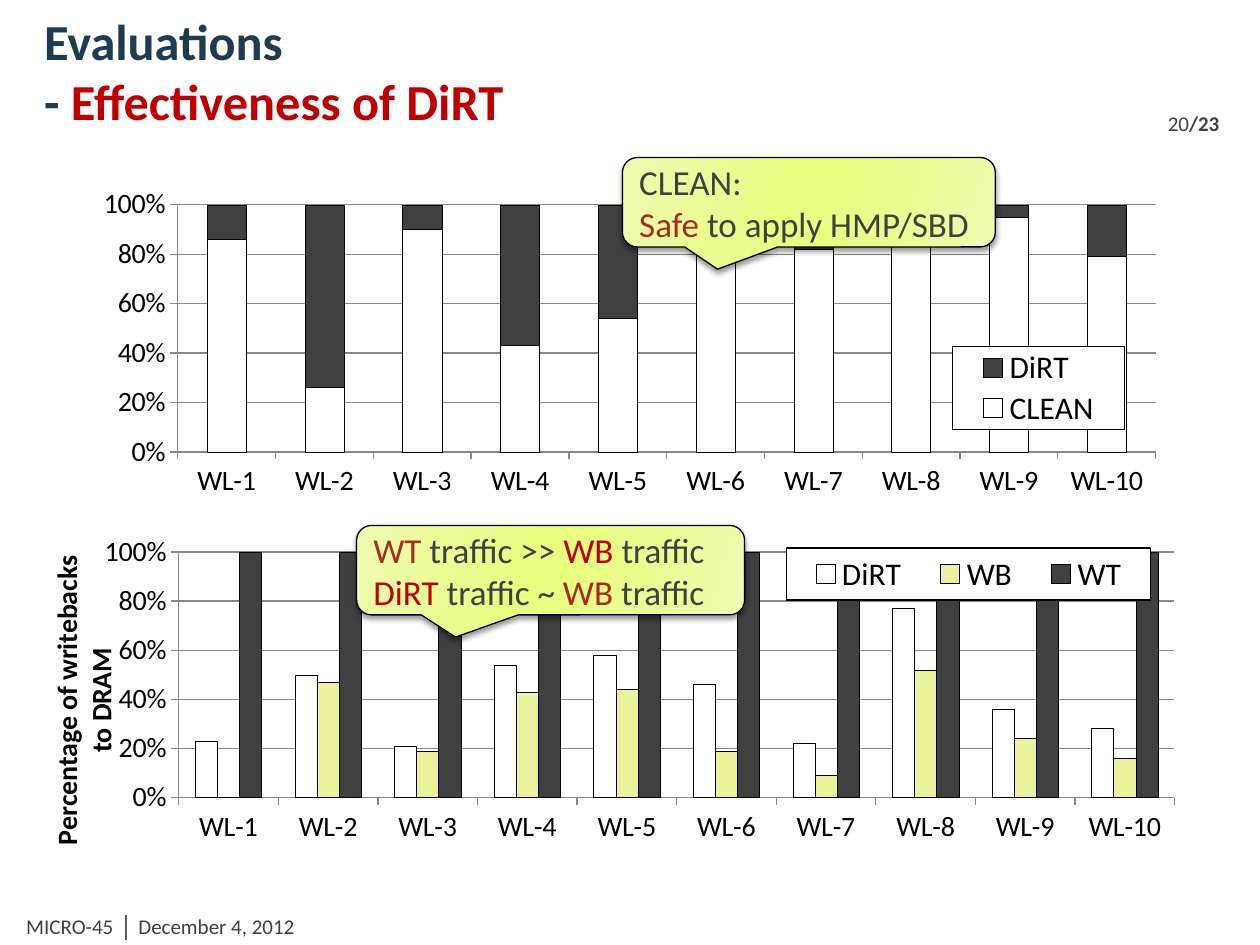
from lxml import etree
from pptx import Presentation
from pptx.chart.data import CategoryChartData
from pptx.dml.color import RGBColor
from pptx.enum.chart import XL_CHART_TYPE as ChartType, XL_LEGEND_POSITION as LegendPos, XL_TICK_MARK as Tick
from pptx.enum.shapes import MSO_CONNECTOR as Connector, MSO_SHAPE as Preset
from pptx.enum.text import MSO_ANCHOR as Anchor, PP_ALIGN as Align
from pptx.oxml import parse_xml
from pptx.oxml.ns import nsdecls, qn
from pptx.util import Inches, Pt

FONT = "Calibri"
HEX = {"navy": "203A4E", "red": "C00000", "brick": "AA2B1E", "dark": "404040", "rule": "595959",
       "grid": "888888", "lime": "EAF29B", "white": "FFFFFF", "black": "000000"}
COLOR = {name: RGBColor.from_string(value) for name, value in HEX.items()}
GLOW = [(0, "EFFBB3"), (30, "EAFC8F"), (45, "E9FD81"), (55, "E9FD81"), (73, "EAFC8F"), (100, "EFFBB3")]


def write_runs(paragraph, runs, size):
    """Add (text, colour name, bold) runs; a vertical tab in the text breaks the line."""
    paragraph.alignment = Align.LEFT
    for words, color, bold in runs:
        for index, part in enumerate(words.split("\v")):
            if index:
                paragraph.add_line_break()
            run = paragraph.add_run()
            run.text = part
            run.font.name, run.font.size, run.font.bold = FONT, Pt(size), bold
            run.font.color.rgb = COLOR[color]


def place(element, index, box, inner=False):
    """Give a chart part a manual layout, in shares of the chart's size."""
    for old in element.findall(qn("c:layout")):
        element.remove(old)
    layout = etree.Element(qn("c:layout"))
    manual = etree.SubElement(layout, qn("c:manualLayout"))
    settings = [("layoutTarget", "inner")] if inner else []
    settings += [("xMode", "edge"), ("yMode", "edge"), *zip("xywh", box)]
    for tag, value in settings:
        etree.SubElement(manual, qn(f"c:{tag}")).set("val", str(value))
    element.insert(index, layout)


prs = Presentation()
prs.slide_width, prs.slide_height = Inches(10), Inches(7.5)
slide = prs.slides.add_slide(prs.slide_layouts[5])
shapes = slide.shapes

# Title
title = shapes.title
title.left, title.top, title.width, title.height = map(Inches, (0.25, 0.17, 9.25, 0.92))
title.text_frame.vertical_anchor = Anchor.BOTTOM
write_runs(title.text_frame.paragraphs[0],
           [("Evaluations\v- ", "navy", True), ("Effectiveness of DiRT", "red", True)], 28.8)

# Footer and page number
for left, top, width, runs in [
    (0.11, 7.2, 0.92, [("MICRO-45", "dark", False)]),
    (1, 7.2, 3.18, [("December 4, 2012", "dark", False)]),
    (9.17, 0.83, 0.67, [("20", "dark", False), ("/23", "dark", True)]),
]:
    label = shapes.add_textbox(Inches(left), Inches(top), Inches(width), Inches(0.25))
    label.text_frame.word_wrap = True
    write_runs(label.text_frame.paragraphs[0], runs, 12)
divider = shapes.add_connector(Connector.STRAIGHT, Inches(1), Inches(7.26), Inches(1), Inches(7.46))
divider.line.color.rgb, divider.line.width = COLOR["rule"], Pt(1)
etree.SubElement(divider._element.spPr, qn("a:effectLst"))

# Charts
workloads = [f"WL-{number}" for number in range(1, 11)]
charts = [
    {"type": ChartType.COLUMN_STACKED, "at": (0.58, 1.42, 8.75, 2.67),
     "plot": (0.095, 0.077, 0.887, 0.735), "legend": (0.798, 0.498, 0.156, 0.247), "axis": None,
     "series": [("CLEAN", "white", (0.86, 0.26, 0.9, 0.43, 0.54, 0.91, 0.82, 0.88, 0.95, 0.79)),
                ("DiRT", "dark", (0.14, 0.74, 0.1, 0.57, 0.46, 0.09, 0.18, 0.12, 0.05, 0.21))]},
    {"type": ChartType.COLUMN_CLUSTERED, "at": (0.25, 4.08, 9.5, 3.17),
     "plot": (0.123, 0.095, 0.832, 0.615), "legend": (0.631, 0.085, 0.304, 0.13),
     "axis": "Percentage of writebacks\nto DRAM",
     "series": [("DiRT", "white", (0.23, 0.5, 0.21, 0.54, 0.58, 0.46, 0.22, 0.77, 0.36, 0.28)),
                ("WB", "lime", (0, 0.47, 0.19, 0.43, 0.44, 0.19, 0.09, 0.52, 0.24, 0.16)),
                ("WT", "dark", (1,) * 10)]},
]
for item in charts:
    data = CategoryChartData(number_format="0%")
    data.categories = workloads
    for name, _, values in item["series"]:
        data.add_series(name, values)
    chart = shapes.add_chart(item["type"], *map(Inches, item["at"]), data).chart
    chart.has_title = False
    chart.font.name, chart.font.size = FONT, Pt(16)
    chart.font.color.rgb = COLOR["black"]

    bars = chart.plots[0]
    bars.gap_width, bars.vary_by_categories = 150, False
    bars.overlap = 100 if item["type"] == ChartType.COLUMN_STACKED else 0
    for series, (_, color, _) in zip(bars.series, item["series"]):
        series.invert_if_negative = False
        series.format.fill.solid()
        series.format.fill.fore_color.rgb = COLOR[color]
        series.format.line.color.rgb, series.format.line.width = COLOR["black"], Pt(0.25)

    percent = chart.value_axis
    percent.minimum_scale, percent.maximum_scale, percent.major_unit = 0, 1, 0.2
    percent.tick_labels.number_format, percent.tick_labels.number_format_is_linked = "0%", False
    percent.has_major_gridlines = True
    for line in (percent.major_gridlines.format.line, percent.format.line, chart.category_axis.format.line):
        line.color.rgb, line.width = COLOR["grid"], Pt(0.75)
    for axis in (percent, chart.category_axis):
        axis.major_tick_mark, axis.minor_tick_mark = Tick.OUTSIDE, Tick.NONE
    if item["axis"]:
        caption = percent.axis_title
        caption.text_frame.text = item["axis"]
        body = caption.text_frame._txBody.find(qn("a:bodyPr"))
        body.set("rot", "-5400000")
        body.set("vert", "horz")
        for paragraph in caption.text_frame.paragraphs:
            paragraph.font.name, paragraph.font.size, paragraph.font.bold = FONT, Pt(16), True
        place(caption._element, 1, (0.011, 0.095))

    chart.has_legend = True
    legend = chart.legend
    legend.position, legend.include_in_layout = LegendPos.RIGHT, True
    legend.font.name, legend.font.size = FONT, Pt(18)
    legend._element.find(qn("c:overlay")).addnext(parse_xml(
        f'<c:spPr {nsdecls("c", "a")}><a:solidFill><a:srgbClr val="{HEX["white"]}"/></a:solidFill>'
        f'<a:ln w="9525"><a:solidFill><a:srgbClr val="{HEX["black"]}"/></a:solidFill></a:ln></c:spPr>'))
    place(legend._element, 1, item["legend"])
    place(chart._chartSpace.chart.plotArea, 0, item["plot"], inner=True)

# Callouts
stops = "".join(f'<a:gs pos="{share * 1000}"><a:srgbClr val="{value}"/></a:gs>' for share, value in GLOW)
for box, lines in [
    ((4.94, 1.25, 2.96, 0.71),
     [[("CLEAN:", "dark")], [("Safe", "brick"), (" to apply HMP/SBD", "dark")]]),
    ((2.83, 4.17, 3.08, 0.71),
     [[("WT", "brick"), (" traffic >> ", "dark"), ("WB ", "red"), ("traffic", "dark")],
      [("DiRT ", "red"), ("traffic ~ ", "dark"), ("WB", "brick"), (" traffic", "dark")]]),
]:
    callout = shapes.add_shape(Preset.ROUNDED_RECTANGULAR_CALLOUT, *map(Inches, box))
    for index, value in enumerate((-0.245, 0.749, 0.167)):
        callout.adjustments[index] = value
    callout.line.color.rgb, callout.line.width = COLOR["black"], Pt(0.75)
    properties = callout._element.spPr
    properties.find(qn("a:prstGeom")).addnext(parse_xml(
        f'<a:gradFill {nsdecls("a")} rotWithShape="1"><a:gsLst>{stops}</a:gsLst>'
        f'<a:lin ang="{16 * 60000}" scaled="1"/></a:gradFill>'))
    properties.append(parse_xml(
        f'<a:effectLst {nsdecls("a")}><a:outerShdw blurRad="{Pt(3)}" dist="{Pt(2)}" dir="5400000" '
        f'rotWithShape="0"><a:srgbClr val="{HEX["black"]}"><a:alpha val="40000"/></a:srgbClr>'
        '</a:outerShdw></a:effectLst>'))
    frame = callout.text_frame
    frame.word_wrap, frame.vertical_anchor = True, Anchor.MIDDLE
    for index, runs in enumerate(lines):
        paragraph = frame.add_paragraph() if index else frame.paragraphs[0]
        write_runs(paragraph, [(words, color, False) for words, color in runs], 20)

prs.save("out.pptx")
